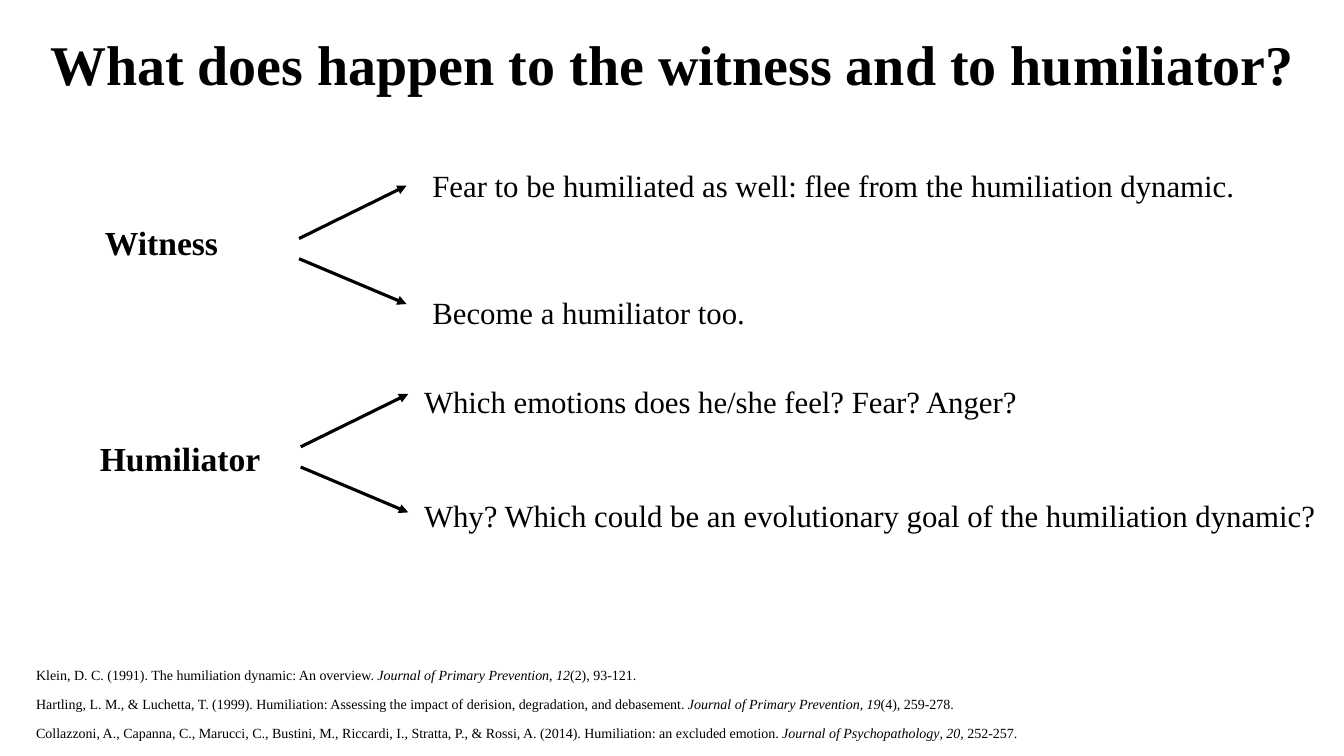
from dataclasses import dataclass

from lxml.etree import SubElement
from pptx import Presentation
from pptx.dml.color import RGBColor
from pptx.enum.shapes import MSO_CONNECTOR as Connector
from pptx.enum.text import MSO_ANCHOR as Anchor, MSO_AUTO_SIZE as AutoSize, PP_ALIGN as Align
from pptx.oxml.ns import qn
from pptx.util import Inches, Pt


@dataclass(frozen=True)
class Theme:
    font: str = "Times New Roman"
    ink: RGBColor = RGBColor(0, 0, 0)
    title: int = 40
    label: int = 24
    answer: int = 22
    reference: int = 10
    arrow: float = 2.25


WIDTH, HEIGHT = Inches(13.33), Inches(7.5)
COLUMNS = 16
ROWS = 9
TITLE_AND_CONTENT = 1

# Each branch: label and its place, fork of the arrows, column and (row, text) of the answers
BRANCHES = [
    ("Witness", (1.13, 2.58), (3.56, 2.84), 5.03, [
        (1.93, "Fear to be humiliated as well: flee from the humiliation dynamic."),
        (3.44, "Become a humiliator too."),
    ]),
    ("Humiliator", (1.07, 5.16), (3.58, 5.32), 4.93, [
        (4.5, "Which emotions does he/she feel? Fear? Anger?"),
        (5.86, "Why? Which could be an evolutionary goal of the humiliation dynamic?"),
    ]),
]

# Start and end rows of the two arrows, measured from the fork
ARROW_ROWS = [(0, -0.63), (0.24, 0.78)]
ARROW_COLUMNS = 1.28

# Work, journal, volume, pages
REFERENCES = [
    ("Klein, D. C. (1991). The humiliation dynamic: An overview. ",
     "Journal of Primary Prevention", "12", "(2), 93-121."),
    ("Hartling, L. M., & Luchetta, T. (1999). Humiliation: Assessing the impact of "
     "derision, degradation, and debasement. ",
     "Journal of Primary Prevention", "19", "(4), 259-278."),
    ("Collazzoni, A., Capanna, C., Marucci, C., Bustini, M., Riccardi, I., Stratta, P., "
     "& Rossi, A. (2014). Humiliation: an excluded emotion. ",
     "Journal of Psychopathology", "20", ", 252-257."),
]


class SlideBuilder:
    def __init__(self, page, theme):
        self.page = page
        self.theme = theme

    def cells(self, *lengths):
        """Turn alternating column and row counts into lengths."""
        units = (WIDTH / COLUMNS, HEIGHT / ROWS)
        return [round(length * units[i % 2]) for i, length in enumerate(lengths)]

    def place(self, shape, *area):
        shape.left, shape.top, shape.width, shape.height = self.cells(*area)

    def style(self, paragraph, size, bold=False):
        font = paragraph.font
        font.name, font.size, font.bold = self.theme.font, Pt(size), bold
        font.color.rgb = self.theme.ink

    def title(self, text, *area):
        title = self.page.shapes.title
        self.place(title, *area)
        frame = title.text_frame
        frame.text = text
        frame.vertical_anchor = Anchor.TOP
        paragraph = frame.paragraphs[0]
        paragraph.alignment = Align.CENTER
        self.style(paragraph, self.theme.title, bold=True)

    def text(self, parent, text, size, *area, bold=False):
        frame = parent.shapes.add_textbox(*self.cells(*area)).text_frame
        frame.word_wrap = True
        frame.text = text
        self.style(frame.paragraphs[0], size, bold)

    def arrow(self, parent, *ends):
        line = parent.shapes.add_connector(Connector.STRAIGHT, *self.cells(*ends))
        line.line.color.rgb = self.theme.ink
        line.line.width = Pt(self.theme.arrow)
        SubElement(line.line._get_or_add_ln(), qn("a:tailEnd"), type="triangle")
        SubElement(line._element.spPr, qn("a:effectLst"))

    def branch(self, label, label_place, fork, answer_column, answers):
        """Draw a label with an arrow to each of its answers."""
        group = self.page.shapes.add_group_shape()
        self.text(group, label, self.theme.label, *label_place, 2.4, 0.6, bold=True)
        column, row = fork
        for start, end in ARROW_ROWS:
            self.arrow(group, column, row + start, column + ARROW_COLUMNS, row + end)
        for answer_row, answer in answers:
            self.text(group, answer, self.theme.answer,
                      answer_column, answer_row, COLUMNS - answer_column, 0.6)

    def references(self, entries, *area):
        body = self.page.placeholders[1]
        self.place(body, *area)
        frame = body.text_frame
        frame.auto_size = AutoSize.NONE
        frame.vertical_anchor = Anchor.BOTTOM
        frame.margin_bottom = Inches(0.14)
        for index, (work, journal, volume, pages) in enumerate(entries):
            paragraph = frame.add_paragraph() if index else frame.paragraphs[0]
            paragraph.alignment = Align.JUSTIFY
            paragraph.line_spacing = 0.9
            paragraph.space_before = Pt(10)
            self.style(paragraph, self.theme.reference)
            properties = paragraph._p.get_or_add_pPr()
            properties.set("marL", "0")
            properties.set("indent", "0")
            properties.find(qn("a:spcBef")).addnext(
                properties.makeelement(qn("a:buNone"), {}))
            for text, italic in ((work, False), (journal, True), (", ", False),
                                 (volume, True), (pages, False)):
                span = paragraph.add_run()
                span.text = text
                span.font.italic = italic


def main():
    deck = Presentation()
    deck.slide_width, deck.slide_height = WIDTH, HEIGHT
    page = deck.slides.add_slide(deck.slide_layouts[TITLE_AND_CONTENT])
    builder = SlideBuilder(page, Theme())
    builder.title("What does happen to the witness and to humiliator?", 0, 0.29, COLUMNS, 1.3)
    for branch in BRANCHES:
        builder.branch(*branch)
    builder.references(REFERENCES, 0.31, 7.01, 15.69, 1.99)
    deck.save("out.pptx")


if __name__ == "__main__":
    main()
